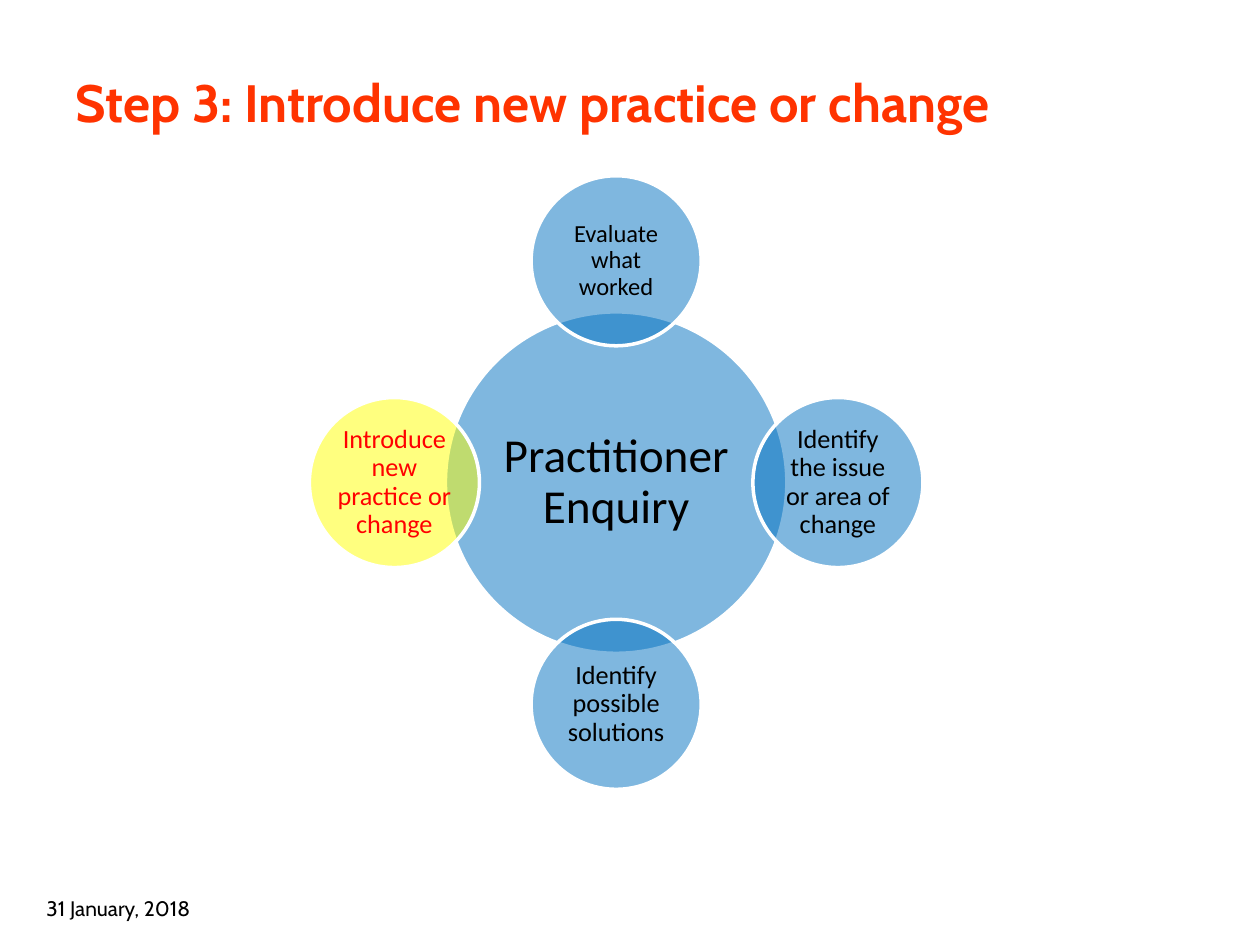
from lxml.etree import SubElement
from pptx import Presentation
from pptx.dml.color import RGBColor
from pptx.enum.shapes import MSO_SHAPE as Shape
from pptx.enum.text import MSO_ANCHOR as Anchor, PP_ALIGN as Align
from pptx.oxml.ns import qn
from pptx.util import Inches, Pt

# Content
TITLE = "Step 3: Introduce new practice or change"
DATE = "31 January, 2018"
HUB = ("Practitioner Enquiry", 27)
# text, size, direction from the hub (x, y), fill, text colour
STEPS = [
    ("Evaluate what worked", 14, (0, -1), "0070C0", "000000"),
    ("Identify the issue or area of change", 15, (1, 0), "0070C0", "000000"),
    ("Identify possible solutions", 15, (0, 1), "0070C0", "000000"),
    ("Introduce new practice or change", 15, (-1, 0), "FFFF00", "FF0000"),
]

# Layout in inches
CENTER_X, CENTER_Y = 4.89, 3.83
HUB_SIZE, STEP_SIZE = 2.71, 1.35
ORBIT = 1.76


def color(value):
    return RGBColor.from_string(value)


def write(shape, text, size, font, ink, bold=False):
    frame = shape.text_frame
    frame.word_wrap = True
    frame.vertical_anchor = Anchor.MIDDLE
    para = frame.paragraphs[0]
    span = para.add_run()
    span.text = text
    span.font.size = Pt(size)
    span.font.name = font
    span.font.bold = bold
    span.font.color.rgb = color(ink)
    return para


def add_text(page, place, *style, **options):
    box = page.shapes.add_textbox(*map(Inches, place))
    write(box, *style, **options)


def add_circle(page, x, y, diameter, inset, fill, text, size, ink):
    circle = page.shapes.add_shape(
        Shape.OVAL, Inches(x - diameter / 2), Inches(y - diameter / 2),
        Inches(diameter), Inches(diameter))
    circle.shadow.inherit = False
    circle.fill.solid()
    circle.fill.fore_color.rgb = color(fill)
    # Half transparent, so that overlaps show
    tint = circle.fill._xPr.find(qn("a:solidFill"))[0]
    SubElement(tint, qn("a:alpha"), val="50000")
    circle.line.color.rgb = color("FFFFFF")
    circle.line.width = Pt(2)
    frame = circle.text_frame
    frame.margin_left = frame.margin_right = Inches(inset)
    frame.margin_top = frame.margin_bottom = Inches(inset)
    para = write(circle, text, size, "Calibri", ink)
    para.alignment = Align.CENTER
    para.line_spacing = 0.9


deck = Presentation()
deck.slide_width, deck.slide_height = Inches(10), Inches(7.5)
page = deck.slides.add_slide(deck.slide_layouts[6])

# Date and title
add_text(page, (0.27, 7.06, 2.95, 0.3), DATE, 12, "Cabin", "000000")
add_text(page, (0.5, 0.3, 9, 1.01), TITLE, 30, "Cabin", "FF3300", bold=True)

# Hub with the four steps around it
add_circle(page, CENTER_X, CENTER_Y, HUB_SIZE, 0.04, "0070C0", *HUB, "000000")
for text, size, (dx, dy), fill, ink in STEPS:
    add_circle(page, CENTER_X + dx * ORBIT, CENTER_Y + dy * ORBIT,
               STEP_SIZE, 0.02, fill, text, size, ink)

deck.save("out.pptx")
